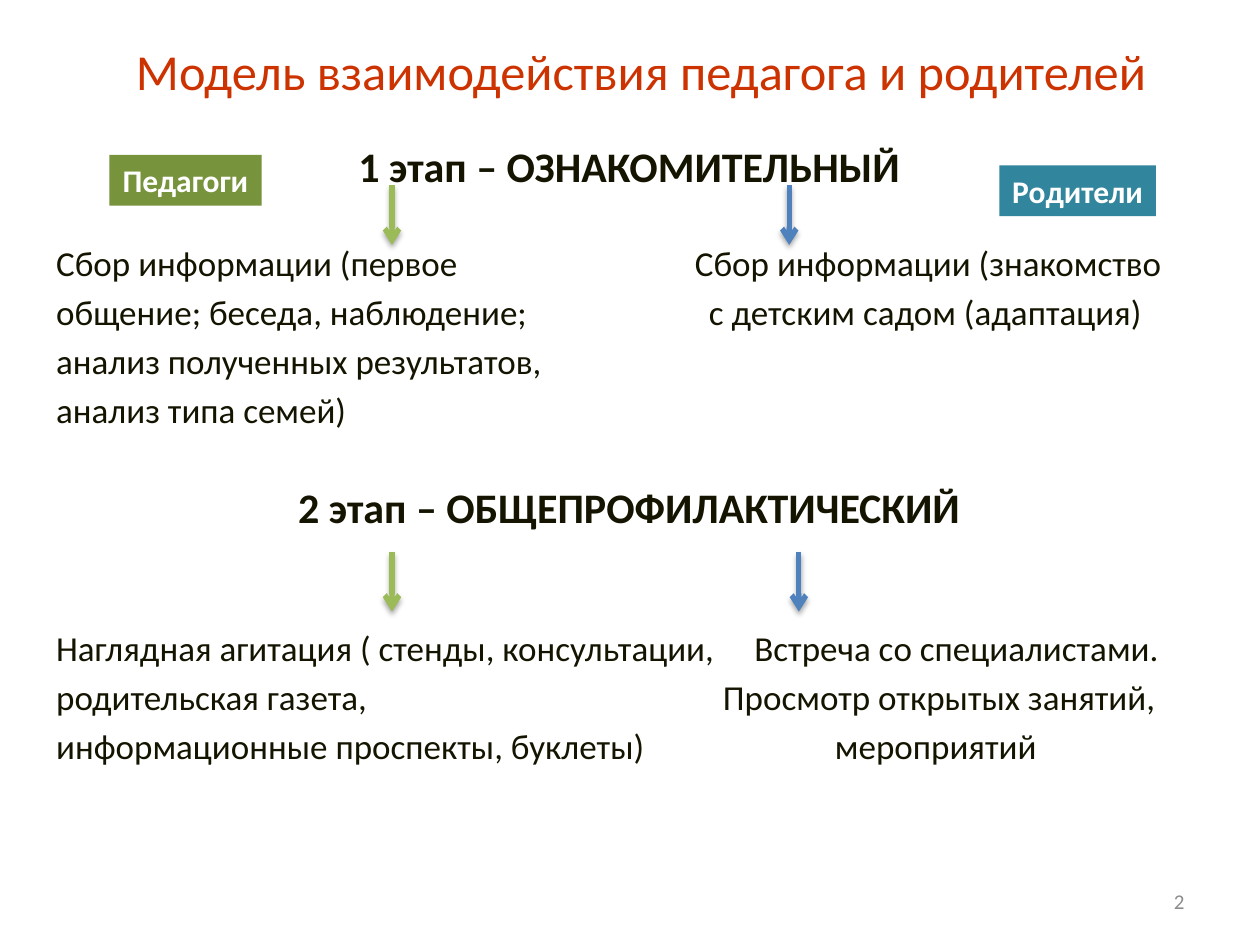
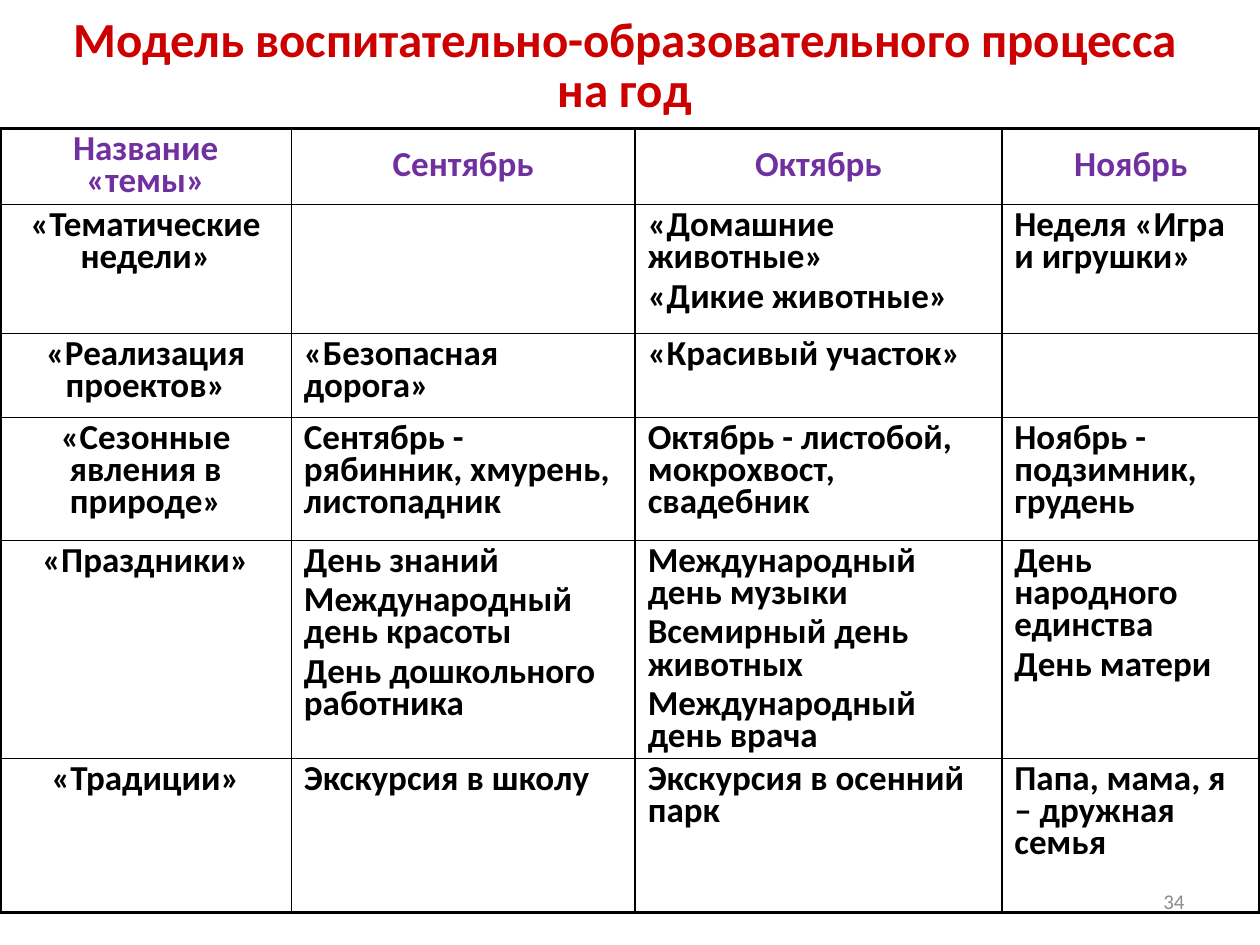
from lxml import etree
from pptx import Presentation
from pptx.dml.color import RGBColor
from pptx.enum import shapes, text
from pptx.oxml import ns
from pptx.util import Pt

FONT = "Calibri"
BLACK = RGBColor(0x00, 0x00, 0x00)
WHITE = RGBColor(0xFF, 0xFF, 0xFF)
INK = RGBColor(0x14, 0x14, 0x00)
GREY = RGBColor(0x8C, 0x8C, 0x8C)
ORANGE_RED = RGBColor(0xCC, 0x33, 0x00)
RED = RGBColor(0xCC, 0x00, 0x00)
PURPLE = RGBColor(0x70, 0x30, 0xA0)
DARK_GREEN = RGBColor(0x77, 0x93, 0x3C)
GREEN = RGBColor(0x9B, 0xBB, 0x59)
TEAL = RGBColor(0x31, 0x85, 0x9C)
BLUE = RGBColor(0x4F, 0x81, 0xBD)

LEFT, CENTER, RIGHT = text.PP_ALIGN.LEFT, text.PP_ALIGN.CENTER, text.PP_ALIGN.RIGHT
TOP, MIDDLE, BOTTOM = text.MSO_ANCHOR.TOP, text.MSO_ANCHOR.MIDDLE, text.MSO_ANCHOR.BOTTOM

STAGE_LINES = [
    ("1 этап – ОЗНАКОМИТЕЛЬНЫЙ", 0, None),
    ("Сбор информации (первое\tСбор информации (знакомство", 28.5, 365),
    ("общение; беседа, наблюдение;\tс детским садом (адаптация)", 4, 373),
    ("анализ полученных результатов,", 4, None),
    ("анализ типа семей)", 4, None),
    ("2 этап – ОБЩЕПРОФИЛАКТИЧЕСКИЙ", 29.5, None),
    ("Наглядная агитация ( стенды, консультации,\tВстреча со специалистами.", 54, 399),
    ("родительская газета,\tПросмотр открытых занятий,", 4, 381),
    ("информационные проспекты, буклеты)\tмероприятий", 4, 445),
]
ARROWS = [(224, 106, GREEN), (451, 106, BLUE), (224, 315.5, GREEN), (456.5, 315.5, BLUE)]

COLUMN_WIDTHS = [166.5, 196.5, 209.5, 147.5]
ROW_HEIGHTS = [43.5, 73.5, 48, 70.5, 124.5, 88]
YEAR_PLAN = [
    ["Название «темы»", "Сентябрь", "Октябрь", "Ноябрь"],
    ["«Тематические недели»", "", "«Домашние животные»\n«Дикие животные»",
     "Неделя «Игра и игрушки»"],
    ["«Реализация проектов»", "«Безопасная дорога»", "«Красивый участок»", ""],
    ["«Сезонные явления в природе»", "Сентябрь - рябинник, хмурень, листопадник",
     "Октябрь - листобой, мокрохвост, свадебник", "Ноябрь - подзимник, грудень"],
    ["«Праздники»",
     "День знаний\nМеждународный день красоты\nДень дошкольного работника",
     "Международный день музыки\nВсемирный день животных\nМеждународный день врача",
     "День народного единства\nДень матери"],
    ["«Традиции»", "Экскурсия в школу", "Экскурсия в осенний парк",
     "Папа, мама, я – дружная семья"],
]


def add_xml(parent, tag, **attributes):
    """Append a DrawingML element and return it."""
    values = {name: str(value) for name, value in attributes.items()}
    return etree.SubElement(parent, ns.qn(tag), values)


def write(para, words, size=20, color=BLACK, bold=False, align=LEFT,
          before=0, spacing=None, tab=None):
    """Put formatted text into a paragraph."""
    para.alignment = align
    para.space_before = Pt(before)
    if spacing:
        para.line_spacing = spacing
    if tab:
        stops = add_xml(para._p.get_or_add_pPr(), "a:tabLst")
        add_xml(stops, "a:tab", pos=Pt(tab), algn="l")
    span = para.add_run()
    span.text = words
    span.font.name = FONT
    span.font.size = Pt(size)
    span.font.bold = bold
    span.font.color.rgb = color


def next_para(frame, index):
    """Return the first paragraph of a frame, or a new one after it."""
    return frame.add_paragraph() if index else frame.paragraphs[0]


class SlideBuilder:
    """Holds the deck style and the current page."""

    def __init__(self):
        """Start an empty 4:3 deck."""
        self.deck = Presentation()
        self.deck.slide_width, self.deck.slide_height = Pt(720), Pt(540)
        self.page = None

    def new_page(self):
        """Add a blank page and make it current."""
        self.page = self.deck.slides.add_slide(self.deck.slide_layouts[6])

    def text_box(self, left, top, width, height, anchor=TOP):
        """Add a wrapping text box and return its frame."""
        box = self.page.shapes.add_textbox(Pt(left), Pt(top), Pt(width), Pt(height))
        frame = box.text_frame
        frame.word_wrap = True
        frame.vertical_anchor = anchor
        return frame

    def title(self, words, place, anchor=TOP, bottom_inset=3.6, **style):
        """Add a centred page title."""
        frame = self.text_box(*place, anchor)
        frame.margin_bottom = Pt(bottom_inset)
        write(frame.paragraphs[0], words, align=CENTER, **style)

    def page_number(self, number):
        """Add the grey number at the bottom right."""
        frame = self.text_box(516, 500.5, 168, 28.5, MIDDLE)
        write(frame.paragraphs[0], number, size=12, color=GREY, align=RIGHT)

    def stages(self, lines):
        """Add centred stage headings with two-column lines below them."""
        frame = self.text_box(25, 77, 669, 406)
        for index, (words, before, tab) in enumerate(lines):
            heading = "этап –" in words
            write(next_para(frame, index), words, size=24 if heading else 20,
                  color=INK, bold=heading, align=CENTER if heading else LEFT,
                  before=before, tab=tab)

    def label(self, words, left, top, width, fill):
        """Add a filled label with white bold text."""
        box = self.page.shapes.add_shape(
            shapes.MSO_SHAPE.RECTANGLE, Pt(left), Pt(top), Pt(width), Pt(29))
        box.shadow.inherit = False
        box.fill.solid()
        box.fill.fore_color.rgb = fill
        box.line.fill.background()
        box.text_frame.word_wrap = False
        write(box.text_frame.paragraphs[0], words, size=18, color=WHITE,
              bold=True, align=CENTER)

    def down_arrow(self, x, top, color):
        """Add a short downward arrow with a soft shadow."""
        arrow = self.page.shapes.add_connector(
            shapes.MSO_CONNECTOR.STRAIGHT, Pt(x), Pt(top), Pt(x), Pt(top + 34))
        arrow.line.color.rgb = color
        arrow.line.width = Pt(3)
        add_xml(arrow.line._get_or_add_ln(), "a:tailEnd", type="arrow")
        effects = add_xml(arrow._element.spPr, "a:effectLst")
        shadow = add_xml(effects, "a:outerShdw", blurRad=Pt(3.1), dist=Pt(1.8),
                         dir=5400000, rotWithShape=0)
        add_xml(add_xml(shadow, "a:srgbClr", val=BLACK), "a:alpha", val=35000)

    def borders(self, cell, outer_sides):
        """Draw black cell borders, thicker on the outer sides."""
        props = cell._tc.get_or_add_tcPr()
        for index, side in enumerate("LRTB"):
            width = 2.25 if side in outer_sides else 1
            line = add_xml(props, f"a:ln{side}", w=Pt(width))
            add_xml(add_xml(line, "a:solidFill"), "a:srgbClr", val=BLACK)
            props.insert(index, line)

    def table(self, rows, top, widths, heights):
        """Add a bordered table with a purple header and centred first column."""
        last_row, last_column = len(heights) - 1, len(widths) - 1
        grid = self.page.shapes.add_table(
            len(heights), len(widths), 0, Pt(top), Pt(sum(widths)), Pt(sum(heights))).table
        for column, width in zip(grid.columns, widths):
            column.width = Pt(width)
        for r, row in enumerate(rows):
            grid.rows[r].height = Pt(heights[r])
            for c, words in enumerate(row):
                cell = grid.cell(r, c)
                cell.fill.background()
                cell.vertical_anchor = TOP if r else MIDDLE
                edges = {"L": c == 0, "R": c == last_column, "T": r == 0, "B": r == last_row}
                self.borders(cell, [side for side, outer in edges.items() if outer])
                for index, line in enumerate(words.split("\n") if words else []):
                    write(next_para(cell.text_frame, index), line, bold=True,
                          color=BLACK if r else PURPLE,
                          align=LEFT if r and c else CENTER,
                          before=4 if index else 0, spacing=0.75)


def main():
    """Build both pages and save the deck."""
    builder = SlideBuilder()

    builder.new_page()
    builder.title("Модель взаимодействия педагога и родителей", (37, 19.5, 659, 58),
                  BOTTOM, bottom_inset=20, size=28.8, color=ORANGE_RED)
    builder.stages(STAGE_LINES)
    builder.label("Педагоги", 62.5, 88.5, 87, DARK_GREEN)
    builder.label("Родители", 571, 94.5, 89.5, TEAL)
    for arrow in ARROWS:
        builder.down_arrow(*arrow)
    builder.page_number("2")

    builder.new_page()
    builder.title("Модель воспитательно-образовательного процесса на год",
                  (31, 6.5, 652, 65), size=28, color=RED, bold=True, spacing=0.85)
    builder.table(YEAR_PLAN, 73.5, COLUMN_WIDTHS, ROW_HEIGHTS)
    builder.page_number("34")

    builder.deck.save("out.pptx")


if __name__ == "__main__":
    main()
